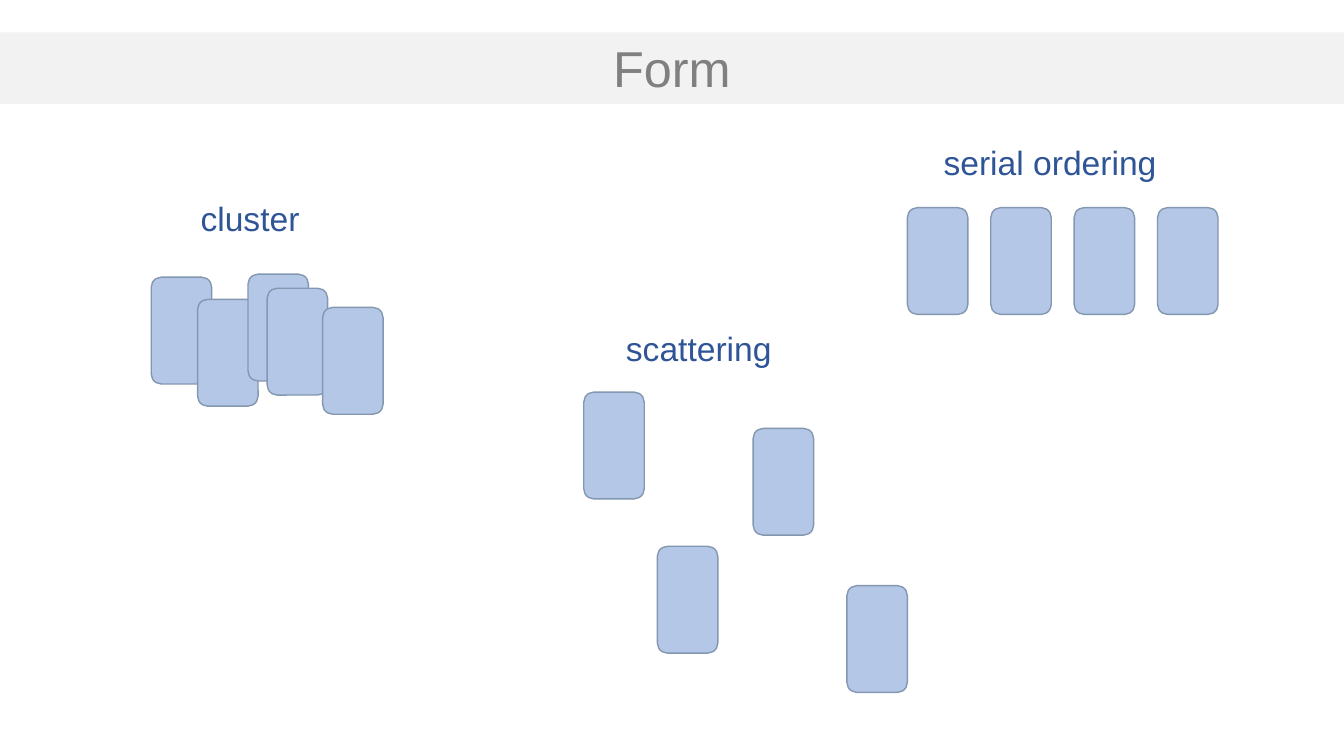
"""Build the "Form" slide: cards as a cluster, a scattering and a serial ordering."""
import pptx
import pptx.util
import pptx.dml.color
import pptx.enum.shapes
import pptx.enum.text

Inches = pptx.util.Inches
Pt = pptx.util.Pt
RGBColor = pptx.dml.color.RGBColor

BAND = RGBColor(0xF2, 0xF2, 0xF2)
TITLE_GRAY = RGBColor(0x80, 0x80, 0x80)
LABEL_BLUE = RGBColor(0x2F, 0x55, 0x97)
CARD_FILL = RGBColor(0xB4, 0xC7, 0xE7)
CARD_LINE = RGBColor(0x84, 0x97, 0xB0)

TITLE = ("Form", (0, 0.32, 13.33, 0.71))
CARD_W, CARD_H = 0.6, 1.06
SERIAL_LEFT, SERIAL_TOP, SERIAL_STEP, SERIAL_COUNT = 9, 2.06, 0.827, 4

GROUPS = [
    ("cluster", (1.89, 1.91, 1.28, 0.5),
     [(1.5, 2.75), (1.96, 2.97), (2.46, 2.72), (2.65, 2.86), (3.2, 3.05)]),
    ("scattering", (6.11, 3.2, 1.8, 0.5),
     [(5.79, 3.89), (6.52, 5.42), (7.47, 4.25), (8.4, 5.81)]),
    ("serial ordering", (9.26, 1.36, 2.53, 0.5),
     [(SERIAL_LEFT + i * SERIAL_STEP, SERIAL_TOP) for i in range(SERIAL_COUNT)]),
]


def add_text(slide, text, box, size, color, wrap, align):
    sp = slide.shapes.add_textbox(*map(Inches, box))
    tf = sp.text_frame
    tf.word_wrap = wrap
    tf.auto_size = pptx.enum.text.MSO_AUTO_SIZE.SHAPE_TO_FIT_TEXT
    tf.text = text
    p = tf.paragraphs[0]
    p.alignment = align
    r = p.runs[0]
    r.font.name = "Arial"
    r.font.size = Pt(size)
    r.font.color.rgb = color
    return sp


def add_card(slide, left, top):
    sp = slide.shapes.add_shape(
        pptx.enum.shapes.MSO_SHAPE.ROUNDED_RECTANGLE,
        *map(Inches, (left, top, CARD_W, CARD_H)))
    sp.shadow.inherit = False
    sp.fill.solid()
    sp.fill.fore_color.rgb = CARD_FILL
    sp.line.color.rgb = CARD_LINE
    sp.line.width = Pt(1)


def main():
    align = pptx.enum.text.PP_ALIGN
    prs = pptx.Presentation()
    prs.slide_width, prs.slide_height = Inches(13.33), Inches(7.5)
    s = prs.slides.add_slide(prs.slide_layouts[6])
    band = add_text(s, *TITLE, 36, TITLE_GRAY, True, align.CENTER)
    band.fill.solid()
    band.fill.fore_color.rgb = BAND
    for label, box, cards in GROUPS:
        add_text(s, label, box, 24, LABEL_BLUE, False, align.LEFT)
        for left, top in cards:
            add_card(s, left, top)
    prs.save("out.pptx")


if __name__ == "__main__":
    main()
